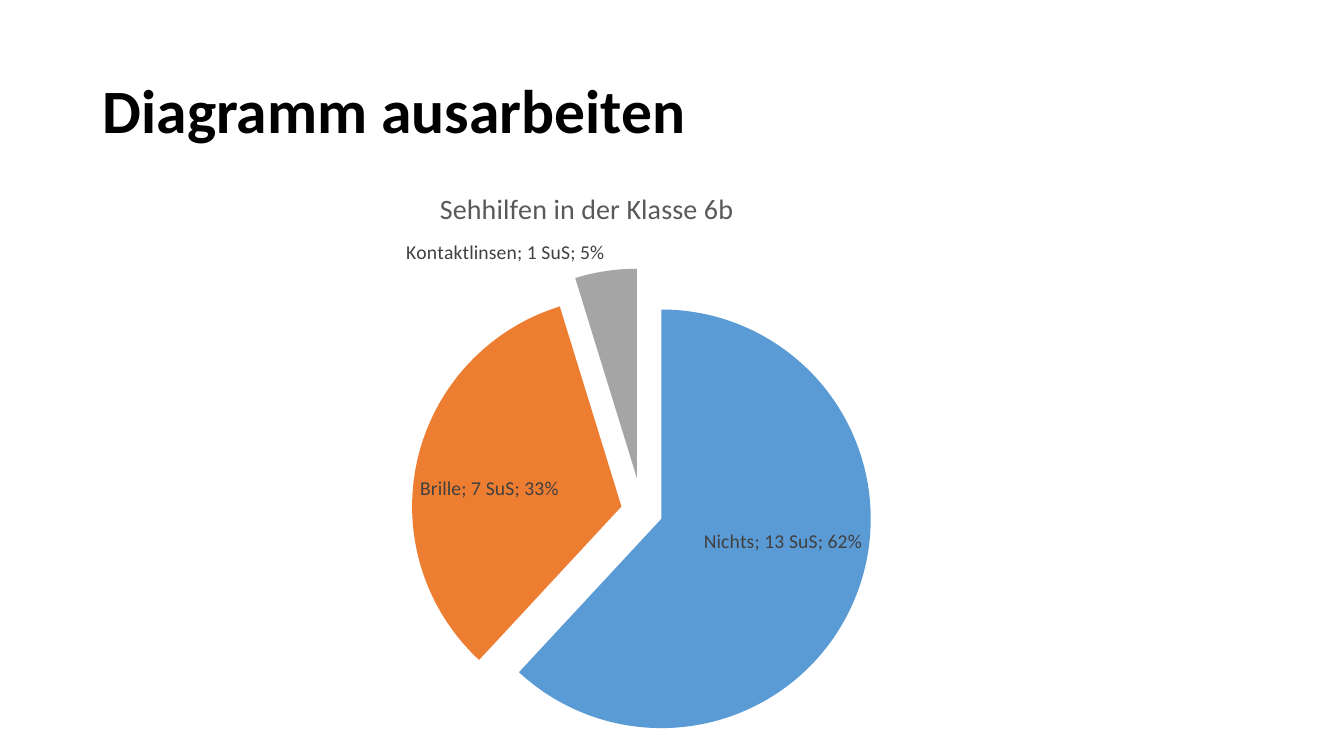
from lxml.etree import SubElement
from pptx import Presentation
from pptx.chart.data import CategoryChartData
from pptx.dml.color import RGBColor
from pptx.enum.chart import XL_CHART_TYPE, XL_LABEL_POSITION
from pptx.enum.text import MSO_ANCHOR, PP_ALIGN
from pptx.oxml import parse_xml
from pptx.oxml.ns import qn
from pptx.util import Inches, Pt

SLICES = [("Nichts", 13, "5B9BD5", 10), ("Brille", 7, "ED7D31", 10), ("Kontaktlinsen", 1, "A5A5A5", 16)]
PLOT = {"x": 0.36, "y": 0.23, "w": 0.38, "h": 0.71}
UNIT = '0\\ "SuS"'
CHART_NS = "http://schemas.openxmlformats.org/drawingml/2006/chart"


def paint(item, color):
    item.rgb = RGBColor.from_string(color)


def assign(item, values):
    for name, value in values.items():
        setattr(item, name, value)


def style(font, size, color, bold=False):
    assign(font, {"name": "Calibri", "size": Pt(size), "bold": bold})
    paint(font.color, color)


def add_title(slide, box, text):
    title = slide.shapes.title
    assign(title, dict(zip(("left", "top", "width", "height"), map(Inches, box))))
    frame = title.text_frame
    assign(frame, {"text": text, "word_wrap": True, "vertical_anchor": MSO_ANCHOR.MIDDLE})
    line = frame.paragraphs[0]
    assign(line, {"alignment": PP_ALIGN.LEFT, "line_spacing": 0.9})
    style(line.runs[0].font, 44, "000000", True)


def set_layout(chart):
    area = chart._chartSpace.chart.plotArea
    for old in area.findall(qn("c:layout")):
        area.remove(old)
    layout = parse_xml(f'<c:layout xmlns:c="{CHART_NS}"/>')
    manual = SubElement(layout, qn("c:manualLayout"))
    modes = {"layoutTarget": "inner", "xMode": "edge", "yMode": "edge"}
    for name, value in {**modes, **PLOT}.items():
        SubElement(manual, qn(f"c:{name}"), val=str(value))
    area.insert(0, layout)


def set_slices(series):
    for index, (_, _, color, offset) in enumerate(SLICES):
        point = series.points[index]
        point.format.fill.solid()
        paint(point.format.fill.fore_color, color)
        node = series._element.findall(qn("c:dPt"))[index]
        shift = parse_xml(f'<c:explosion xmlns:c="{CHART_NS}" val="{offset}"/>')
        node.find(qn("c:spPr")).addprevious(shift)


def set_labels(plot):
    plot.has_data_labels = True
    labels = plot.data_labels
    assign(labels, {
        "show_value": True,
        "show_percentage": True,
        "show_category_name": True,
        "number_format": UNIT,
        "number_format_is_linked": True,
        "position": XL_LABEL_POSITION.BEST_FIT,
    })
    style(labels.font, 14, "404040")
    mark = parse_xml(f'<c:separator xmlns:c="{CHART_NS}">; </c:separator>')
    labels._element.find(qn("c:showBubbleSize")).addnext(mark)


def add_pie(slide, box, text):
    data = CategoryChartData(number_format=UNIT)
    data.categories = [row[0] for row in SLICES]
    data.add_series("Series 1", [row[1] for row in SLICES])
    chart = slide.shapes.add_chart(XL_CHART_TYPE.PIE, *map(Inches, box), data).chart
    assign(chart, {"has_legend": False, "has_title": True})
    style(chart.font, 10, "000000")
    frame = chart.chart_title.text_frame
    frame.text = text
    style(frame.paragraphs[0].runs[0].font, 20, "595959")
    plot = chart.plots[0]
    plot.vary_by_categories = True
    set_layout(chart)
    set_slices(plot.series[0])
    set_labels(plot)


def main():
    deck = Presentation()
    assign(deck, {"slide_width": Inches(13.33), "slide_height": Inches(7.5)})
    slide = deck.slides.add_slide(deck.slide_layouts[5])
    add_title(slide, (0.92, 0.4, 11.5, 1.45), "Diagramm ausarbeiten")
    add_pie(slide, (0.35, 1.65, 10.94, 5.85), "Sehhilfen in der Klasse 6b")
    deck.save("out.pptx")


if __name__ == "__main__":
    main()
